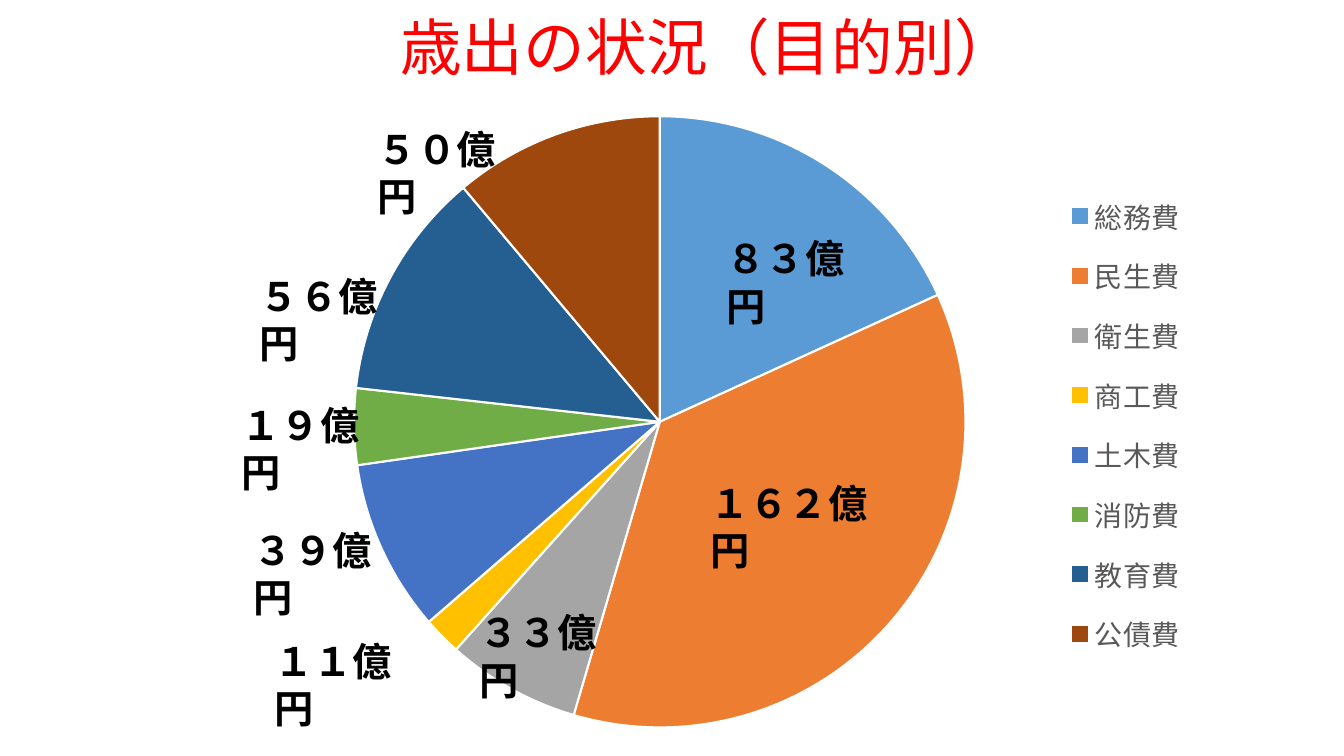
from pptx import Presentation
from pptx.chart.data import CategoryChartData
from pptx.dml.color import RGBColor
from pptx.enum import chart as ch, text
from pptx.oxml import parse_xml
from pptx.oxml.ns import nsdecls
from pptx.util import Inches, Pt

EXPENSES = [
    ("総務費", 18, "5B9BD5"), ("民生費", 36, "ED7D31"),
    ("衛生費", 7, "A5A5A5"), ("商工費", 2, "FFC000"),
    ("土木費", 9, "4472C4"), ("消防費", 4, "70AD47"),
    ("教育費", 12, "255E91"), ("公債費", 11, "9E480E"),
]
AMOUNTS = [
    ("８３億円", 7.11, 2.28), ("１６２億円", 6.95, 4.71),
    ("３３億円", 4.66, 5.99), ("１１億円", 2.62, 6.27),
    ("３９億円", 2.42, 5.17), ("１９億円", 2.3, 3.93),
    ("５６億円", 2.48, 2.65), ("５０億円", 3.65, 1.19),
]


def rgb(value):
    return RGBColor.from_string(value)


def set_layout(element, x, y, w, h, inner=False):
    """Place a chart part by fractions of the chart's size."""
    target = '<c:layoutTarget val="inner"/>' if inner else ""
    for old in element.findall("./{*}layout"):
        element.remove(old)
    layout = parse_xml(
        f'<c:layout {nsdecls("c")}><c:manualLayout>{target}'
        '<c:xMode val="edge"/><c:yMode val="edge"/>'
        f'<c:x val="{x}"/><c:y val="{y}"/><c:w val="{w}"/><c:h val="{h}"/>'
        '</c:manualLayout></c:layout>')
    if inner:
        element.insert(0, layout)
    else:
        element.find("./{*}legendPos").addnext(layout)


class Deck:
    font = "Calibri"

    def __init__(self, prs):
        self.s = prs.slides.add_slide(prs.slide_layouts[5])

    def style(self, font, size, color, bold=False):
        font.name, font.size, font.bold = self.font, Pt(size), bold
        font.color.rgb = rgb(color)

    def set_text(self, sp, words, size, color, bold=False):
        tf = sp.text_frame
        tf.text = words
        tf.word_wrap = True
        tf.auto_size = text.MSO_AUTO_SIZE.SHAPE_TO_FIT_TEXT
        tf.vertical_anchor = text.MSO_ANCHOR.TOP
        p = tf.paragraphs[0]
        p.alignment = text.PP_ALIGN.LEFT
        self.style(p.runs[0].font, size, color, bold)

    def title(self, words, x, y, w, h):
        sp = self.s.shapes.title
        sp.left, sp.top, sp.width, sp.height = map(Inches, (x, y, w, h))
        self.set_text(sp, words, 44, "FF0000")

    def amount(self, words, x, y):
        width = 1.96 if len(words) > 4 else 1.64
        sp = self.s.shapes.add_textbox(*map(Inches, (x, y, width, 0.57)))
        self.set_text(sp, words, 28, "000000", True)

    def pie(self, rows, x, y, w, h):
        names, values, colors = zip(*rows)
        data = CategoryChartData()
        data.categories = names
        data.add_series("Series 1", values)
        chart = self.s.shapes.add_chart(
            ch.XL_CHART_TYPE.PIE, *map(Inches, (x, y, w, h)), data).chart
        chart.has_title = False
        self.style(chart.font, 10, "000000")
        plot = chart.plots[0]
        plot.vary_by_categories = True
        for i, color in enumerate(colors):
            fmt = plot.series[0].points[i].format
            fmt.fill.solid()
            fmt.fill.fore_color.rgb = rgb(color)
            fmt.line.color.rgb = rgb("FFFFFF")
            fmt.line.width = Pt(1.5)
        chart.has_legend = True
        legend = chart.legend
        legend.position = ch.XL_LEGEND_POSITION.RIGHT
        legend.include_in_layout = False
        self.style(legend.font, 20, "595959")
        area = chart.element.find(".//{*}plotArea")
        set_layout(area, 0.13, 0.02, 0.61, 0.96, inner=True)
        set_layout(chart.element.find(".//{*}legend"), 0.83, 0.12, 0.14, 0.77)


def main():
    prs = Presentation()
    prs.slide_width, prs.slide_height = Inches(13.33), Inches(7.5)
    deck = Deck(prs)
    deck.title("歳出の状況（目的別）", 3.87, 0.04, 6.49, 0.84)
    deck.pie(EXPENSES, 2.22, 0.99, 9.94, 6.39)
    for words, x, y in AMOUNTS:
        deck.amount(words, x, y)
    prs.save("out.pptx")


if __name__ == "__main__":
    main()
